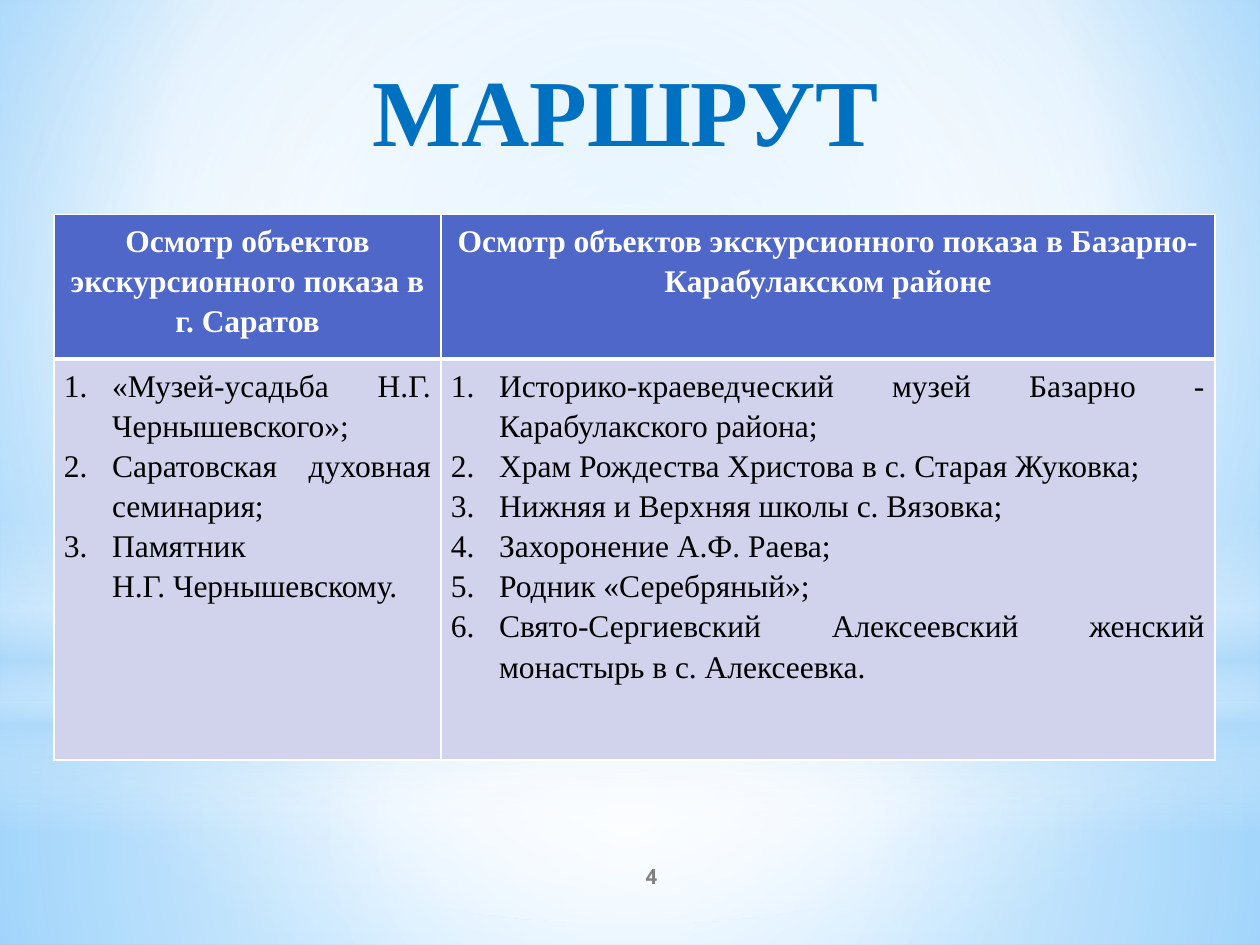
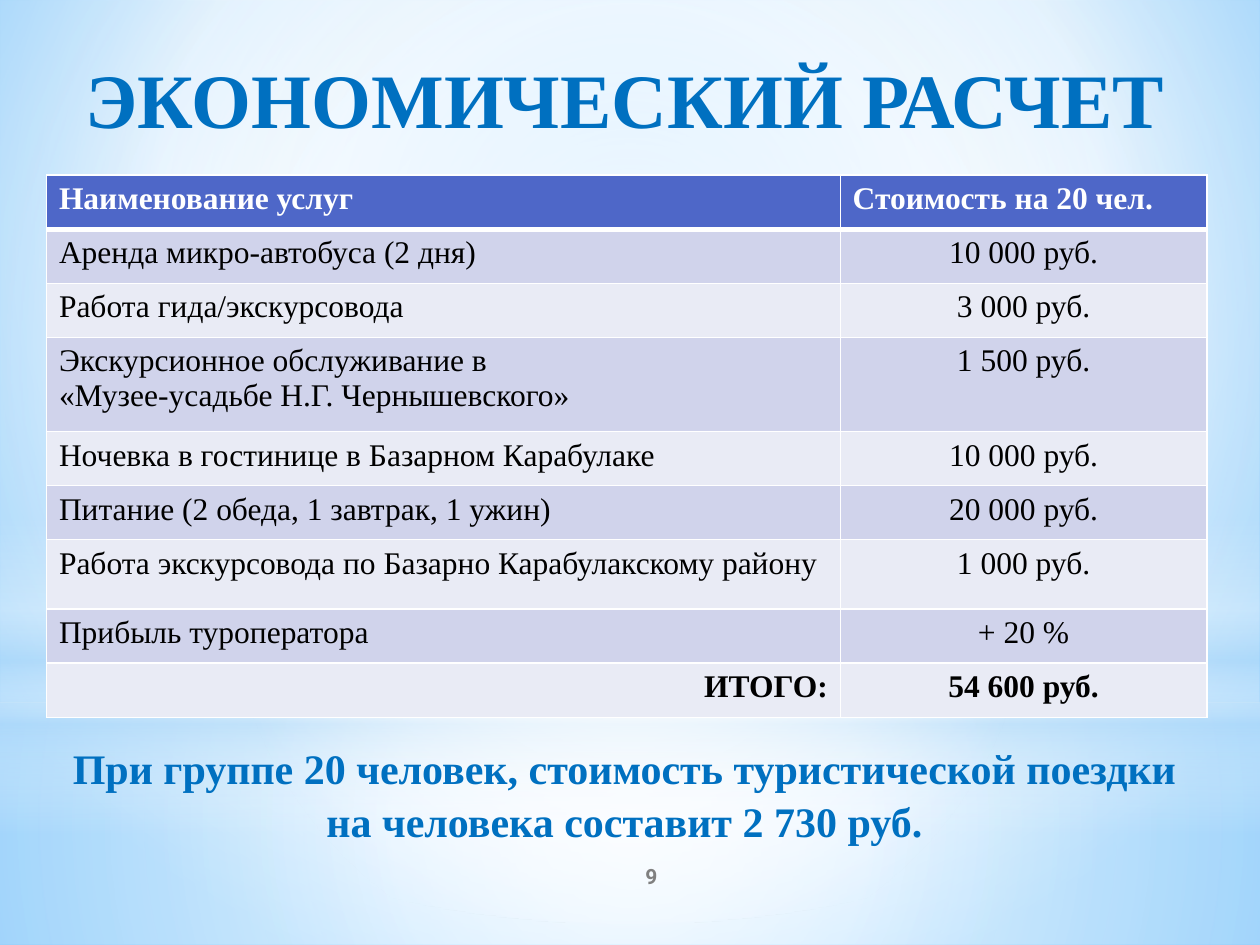
from pptx import Presentation
from pptx.dml.color import RGBColor
from pptx.enum.shapes import MSO_SHAPE
from pptx.enum.text import MSO_ANCHOR, MSO_AUTO_SIZE, PP_ALIGN
from pptx.oxml import parse_xml
from pptx.oxml.ns import nsdecls, qn
from pptx.util import Cm, Pt

COLORS = {
    "title": "0070C0", "number": "808080", "header": "4E67C8",
    "band": "D0D3EB", "light": "E9EBF5", "white": "FFFFFF",
    "black": "000000", "haze": "B4DCFA", "sky": "9ED5FF", "deep": "5BB9FF",
}
SERIF = "Times New Roman"
CENTER = (50, 50, 50, 50)


def write(tf, text, size=18, color="black", bold=False, font=SERIF,
          align=PP_ALIGN.LEFT, spacing=None, numbered=False):
    """Put one paragraph per item of text (a string or a list) into tf."""
    items = [text] if isinstance(text, str) else text
    tf.word_wrap = True
    for i, item in enumerate(items):
        p = tf.paragraphs[0] if i == 0 else tf.add_paragraph()
        p.text = item
        p.alignment = align
        if numbered:
            p.alignment = PP_ALIGN.LEFT if "\v" in item else PP_ALIGN.JUSTIFY
            pPr = p._p.get_or_add_pPr()
            pPr.set("marL", str(Cm(0.97)))
            pPr.set("indent", str(-Cm(0.97)))
            pPr.append(parse_xml(f'<a:buAutoNum {nsdecls("a")} type="arabicPeriod"/>'))
        if spacing:
            p.line_spacing = spacing
        for r in p.runs:
            r.font.name, r.font.size, r.font.bold = font, Pt(size), bold
            r.font.color.rgb = RGBColor.from_string(COLORS[color])


def set_gradient(fill, element, stops, center=None):
    """Give element a gradient: circular around center, else top to bottom."""
    fill.solid()
    gs = "".join(
        f'<a:gs pos="{pos * 1000}"><a:srgbClr val="{COLORS[color]}">'
        f'<a:alpha val="{alpha * 1000}"/></a:srgbClr></a:gs>'
        for pos, color, alpha in stops)
    if center:
        sides = " ".join(f'{s}="{v * 1000}"' for s, v in zip("ltrb", center))
        kind = f'<a:path path="circle"><a:fillToRect {sides}/></a:path>'
    else:
        kind = '<a:lin ang="5400000" scaled="0"/>'
    solid = element.find(".//" + qn("a:solidFill"))
    solid.getparent().replace(solid, parse_xml(
        f'<a:gradFill {nsdecls("a")} rotWithShape="1">'
        f'<a:gsLst>{gs}</a:gsLst>{kind}</a:gradFill>'))


prs = Presentation()
prs.slide_width, prs.slide_height = Cm(25.4), Cm(19.05)
master = prs.slide_master
layout = prs.slide_layouts[5]

# Contents
slides = [
    {
        "title": "МАРШРУТ", "title_size": 54, "number": "4",
        "at": (1.09, 4.32), "cols": [7.8, 15.6], "rows": [2.92, 8.08],
        "margins": (0.2, 0.1), "spacing": 1.15,
        "header_align": PP_ALIGN.CENTER,
        "cells": [
            ["Осмотр объектов экскурсионного показа в г. Саратов",
             "Осмотр объектов экскурсионного показа в Базарно-Карабулакском районе"],
            [["«Музей-усадьба Н.Г. Чернышевского»;",
              "Саратовская духовная семинария;",
              "Памятник\vН.Г. Чернышевскому."],
             ["Историко-краеведческий музей Базарно - Карабулакского района;",
              "Храм Рождества Христова в с. Старая Жуковка;",
              "Нижняя и Верхняя школы с. Вязовка;",
              "Захоронение А.Ф. Раева;",
              "Родник «Серебряный»;",
              "Свято-Сергиевский Алексеевский женский монастырь в с. Алексеевка."]],
        ],
    },
    {
        "title": "ЭКОНОМИЧЕСКИЙ РАСЧЕТ", "title_size": 44, "number": "9",
        "at": (0.94, 3.53), "cols": [16, 7.39],
        "rows": [1.09, 1.09, 1.09, 1.9, 1.09, 1.09, 1.4, 1.09, 1.09],
        "margins": (0.25, 0.13), "spacing": None,
        "header_align": PP_ALIGN.LEFT,
        "cells": [
            ["Наименование услуг", "Стоимость на 20 чел."],
            ["Аренда микро-автобуса (2 дня)", "10 000 руб."],
            ["Работа гида/экскурсовода", "3 000 руб."],
            ["Экскурсионное обслуживание в\v«Музее-усадьбе Н.Г. Чернышевского»",
             "1 500 руб."],
            ["Ночевка в гостинице в Базарном Карабулаке", "10 000 руб."],
            ["Питание (2 обеда, 1 завтрак, 1 ужин)", "20 000 руб."],
            ["Работа экскурсовода по Базарно Карабулакскому району", "1 000 руб."],
            ["Прибыль туроператора", "+ 20 %"],
            ["ИТОГО:", "54 600 руб."],
        ],
        "caption": "При группе 20 человек, стоимость туристической поездки\v"
                   "на человека составит 2 730 руб.",
    },
]

for data in slides:
    slide = prs.slides.add_slide(layout)

    # Title
    sp = slide.shapes.title
    sp.left, sp.top, sp.width, sp.height = Cm(0.51), Cm(0.74), Cm(24.2), Cm(3.18)
    tf = sp.text_frame
    tf.auto_size = MSO_AUTO_SIZE.NONE
    tf.vertical_anchor = MSO_ANCHOR.TOP
    tf.margin_top = Cm(0.3)
    write(tf, data["title"], size=data["title_size"], color="title", bold=True,
          align=PP_ALIGN.CENTER)

    # Table
    cols, rows, cells = data["cols"], data["rows"], data["cells"]
    x, y = data["at"]
    table = slide.shapes.add_table(len(rows), len(cols), Cm(x), Cm(y),
                                   Cm(sum(cols)), Cm(sum(rows))).table
    table.horz_banding = False
    for col, width in zip(table.columns, cols):
        col.width = Cm(width)
    for i, height in enumerate(rows):
        table.rows[i].height = Cm(height)
        for j, text in enumerate(cells[i]):
            cell = table.cell(i, j)
            cell.margin_left = cell.margin_right = Cm(data["margins"][0])
            cell.margin_top = cell.margin_bottom = Cm(data["margins"][1])
            total = text == "ИТОГО:"
            align = (data["header_align"] if i == 0 else PP_ALIGN.RIGHT if total
                     else PP_ALIGN.CENTER if j else PP_ALIGN.LEFT)
            write(cell.text_frame, text, align=align, spacing=data["spacing"],
                  color="black" if i else "white",
                  bold=i == 0 or cells[i][0] == "ИТОГО:",
                  numbered=isinstance(text, list))
            # White borders, thick under the header
            tcPr = cell._tc.get_or_add_tcPr()
            for side in "LRTB":
                width = 3 if (i, side) in ((0, "B"), (1, "T")) else 1
                tcPr.append(parse_xml(
                    f'<a:ln{side} {nsdecls("a")} w="{Pt(width)}"><a:solidFill>'
                    f'<a:srgbClr val="{COLORS["white"]}"/></a:solidFill></a:ln{side}>'))
            fill = "header" if i == 0 else "band" if i % 2 else "light"
            cell.fill.solid()
            cell.fill.fore_color.rgb = RGBColor.from_string(COLORS[fill])

    # Caption under the table
    if "caption" in data:
        tf = slide.shapes.add_textbox(Cm(0.99), Cm(14.73), Cm(23.2), Cm(1.9)).text_frame
        tf.margin_top = Cm(0.19)
        write(tf, data["caption"], size=24, color="title", bold=True,
              align=PP_ALIGN.CENTER, spacing=1.05)

    # Slide number
    tf = slide.shapes.add_textbox(Cm(10.59), Cm(17.15), Cm(5.08), Cm(1.02)).text_frame
    tf.vertical_anchor = MSO_ANCHOR.MIDDLE
    write(tf, data["number"], size=12, color="number", bold=True, font="Roboto",
          align=PP_ALIGN.CENTER)

# Shared sky: background and translucent veils, kept on the master
set_gradient(master.background.fill, master._element,
             [(0, "sky", 100), (60, "white", 100), (100, "deep", 100)],
             (20, 10, 20, 60))
veils = [
    (MSO_SHAPE.RECTANGLE, 14.17, 4.88, CENTER,
     [(0, "white", 91), (37, "white", 76), (100, "haze", 79)]),
    (MSO_SHAPE.RECTANGLE, 0, 14.17, CENTER,
     [(0, "white", 89), (48, "white", 62), (100, "haze", 79)]),
    (MSO_SHAPE.RECTANGLE, 10.46, 6.35, None,
     [(0, "white", 0), (29, "white", 30), (45, "haze", 40),
      (55, "white", 26), (65, "haze", 60), (100, "white", 0)]),
    (MSO_SHAPE.OVAL, 4.45, 14.17, CENTER,
     [(0, "white", 100), (56, "white", 0)]),
]
for i, (shape, top, height, center, stops) in enumerate(veils):
    sp = slide.shapes.add_shape(shape, 0, Cm(top), prs.slide_width, Cm(height))
    sp.shadow.inherit = False
    sp.line.fill.background()
    set_gradient(sp.fill, sp._element, stops, center)
    sp._element.nvSpPr.cNvPr.set("id", str(20 + i))
    master.shapes._spTree.insert(2 + i, sp._element)

prs.save("out.pptx")
